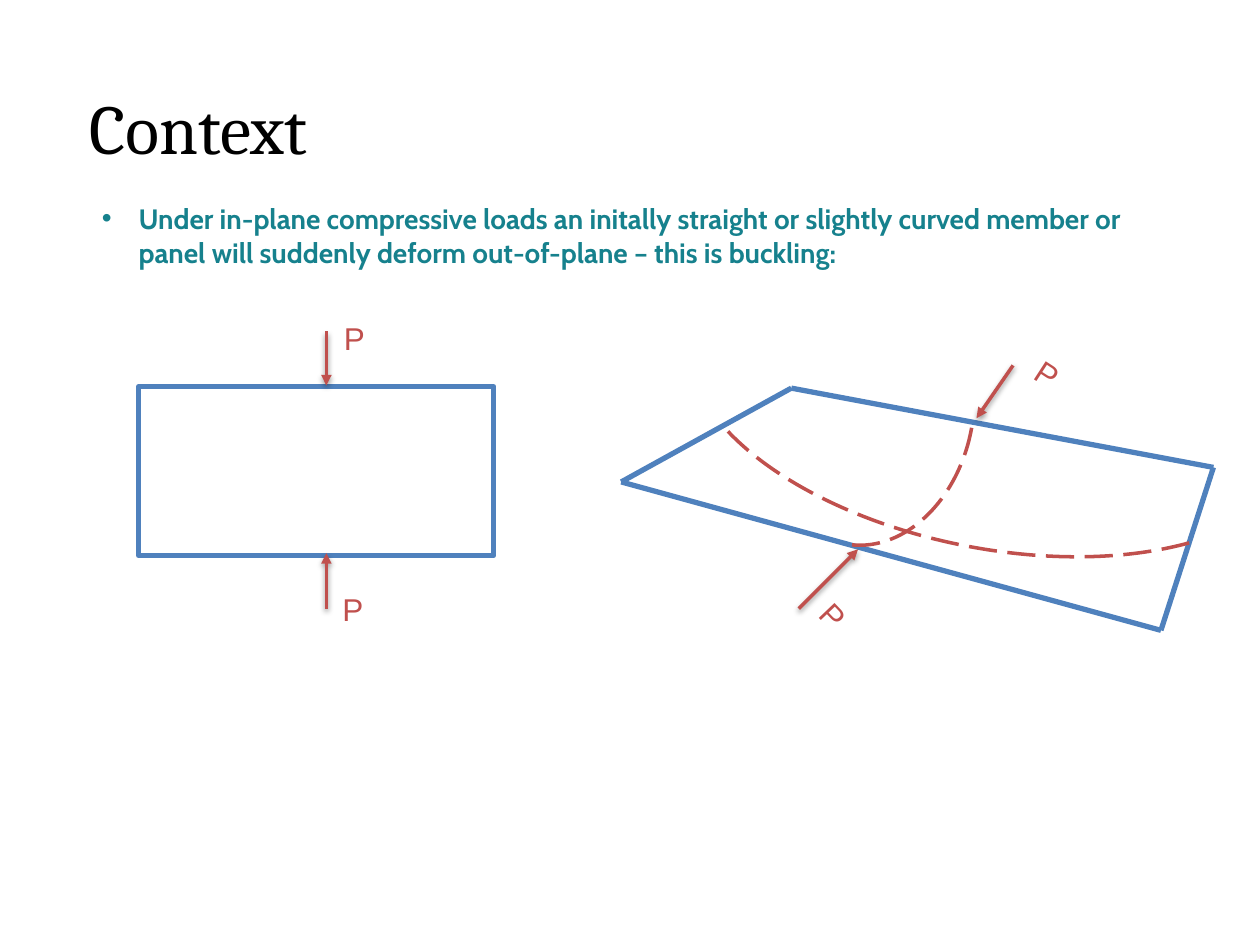
"""Build the buckling context slide with a flat plate and a buckled panel."""
from dataclasses import dataclass

from pptx import Presentation
from pptx.dml.color import RGBColor as Color
from pptx.enum.dml import MSO_LINE_DASH_STYLE as Dash
from pptx.enum.shapes import MSO_CONNECTOR as Connector, MSO_SHAPE as Shape
from pptx.enum.text import MSO_ANCHOR as Anchor, MSO_AUTO_SIZE as AutoSize, PP_ALIGN as Align
from pptx.oxml import parse_xml
from pptx.oxml.ns import nsdecls
from pptx.util import Pt


@dataclass(frozen=True)
class Theme:
    ink: str = "000000"
    teal: str = "16818D"
    edge: str = "4F81BD"
    load: str = "C0504D"
    paper: str = "FFFFFF"
    title_size: float = 40
    body_size: float = 16
    label_size: float = 18
    edge_width: float = 3
    load_width: float = 2


def add_xml(parent, tag, content="", attributes=""):
    parent.append(parse_xml(f"<a:{tag} {nsdecls('a')} {attributes}>{content}</a:{tag}>"))


def write(para, text, *, font, size, color, bold=False):
    span = para.add_run()
    span.text = text
    span.font.name = font
    span.font.size = Pt(size)
    span.font.bold = bold
    span.font.color.rgb = Color.from_string(color)


class SlideBuilder:
    def __init__(self, page, theme):
        self.page = page
        self.theme = theme

    def place(self, box, left, top, width, height):
        box.left, box.top, box.width, box.height = map(Pt, (left, top, width, height))

    def stroke(self, line, color, width):
        line.color.rgb = Color.from_string(color)
        line.width = Pt(width)

    def title(self, text, *bounds):
        box = self.page.shapes.title
        self.place(box, *bounds)
        frame = box.text_frame
        frame.auto_size = AutoSize.NONE
        frame.word_wrap = True
        frame.vertical_anchor = Anchor.TOP
        frame.margin_left = frame.margin_right = frame.margin_top = frame.margin_bottom = 0
        para = frame.paragraphs[0]
        para.alignment = Align.LEFT
        para.line_spacing = Pt(42)
        write(para, text, font="Cambria", size=self.theme.title_size, color=self.theme.ink)

    def bullet(self, text, *bounds):
        box = self.page.placeholders[1]
        self.place(box, *bounds)
        box.fill.solid()
        box.fill.fore_color.rgb = Color.from_string(self.theme.paper)
        add_xml(box.fill._xPr.find(".//{*}srgbClr"), "alpha", attributes='val="90000"')
        box.text_frame.auto_size = AutoSize.NONE
        para = box.text_frame.paragraphs[0]
        props = para._p.get_or_add_pPr()
        props.set("marL", str(Pt(21)))
        props.set("indent", str(Pt(-21)))
        add_xml(props, "buClr", f'<a:srgbClr val="{self.theme.teal}"/>')
        add_xml(props, "buFont", attributes='typeface="Arial"')
        add_xml(props, "buChar", attributes='char="•"')
        para.space_before = Pt(0)
        para.space_after = Pt(6)
        write(para, text, font="Cabin", size=self.theme.body_size,
              color=self.theme.teal, bold=True)

    def plate(self, *bounds):
        plate = self.page.shapes.add_shape(Shape.RECTANGLE, *map(Pt, bounds))
        plate.shadow.inherit = False
        plate.fill.background()
        self.stroke(plate.line, self.theme.edge, self.theme.edge_width)

    def edge(self, group, start, end):
        edge = group.shapes.add_connector(Connector.STRAIGHT, *map(Pt, start + end))
        self.stroke(edge.line, self.theme.edge, self.theme.edge_width)
        add_xml(edge._element.spPr, "effectLst")

    def curve(self, group, bounds, rotation, angles=()):
        arc = group.shapes.add_shape(Shape.ARC, *map(Pt, bounds))
        arc.shadow.inherit = False
        arc.fill.background()
        arc.rotation = rotation
        for index, angle in enumerate(angles):
            arc.adjustments[index] = angle
        self.stroke(arc.line, self.theme.load, self.theme.load_width)
        arc.line.dash_style = Dash.LONG_DASH

    def arrow(self, start, end):
        arrow = self.page.shapes.add_connector(Connector.STRAIGHT, *map(Pt, start + end))
        self.stroke(arrow.line, self.theme.load, self.theme.load_width)
        add_xml(arrow.line._get_or_add_ln(), "tailEnd", attributes='type="triangle"')
        shadow = (f'<a:outerShdw blurRad="{Pt(3.1)}" dist="{Pt(1.6)}" dir="5400000" '
                  'rotWithShape="0"><a:srgbClr val="000000"><a:alpha val="38000"/>'
                  '</a:srgbClr></a:outerShdw>')
        add_xml(arrow._element.spPr, "effectLst", shadow)

    def label(self, text, left, top, rotation=0):
        box = self.page.shapes.add_textbox(Pt(left), Pt(top), Pt(26.6), Pt(29))
        box.rotation = rotation
        box.text_frame.word_wrap = False
        box.text_frame.auto_size = AutoSize.SHAPE_TO_FIT_TEXT
        write(box.text_frame.paragraphs[0], text, font="Arial",
              size=self.theme.label_size, color=self.theme.load)


def main():
    deck = Presentation()
    deck.slide_width, deck.slide_height = Pt(720), Pt(540)
    page = deck.slides.add_slide(deck.slide_layouts[1])
    builder = SlideBuilder(page, Theme())

    builder.title("Context", 51, 54, 513, 51)
    builder.bullet("Under in-plane compressive loads an initally straight or slightly curved "
                   "member or panel will suddenly deform out-of-plane – this is buckling:",
                   51, 111.6, 632, 62.6)
    builder.plate(79.2, 221, 203, 96.5)

    panel = page.shapes.add_group_shape()
    back, left, front, right = (452.2, 221.8), (355, 275.4), (663.4, 360.2), (693.4, 267.1)
    for start, end in ((back, left), (back, right), (left, front), (right, front)):
        builder.edge(panel, start, end)
    builder.curve(panel, (419, 175, 156.2, 118.1), 100.2)
    builder.curve(panel, (477.4, 42.5, 183.6, 358.6), 101, (178.63, 42.4))

    loads = (
        ((186.5, 189.4), (186.5, 220.3), (189.4, 178.6, 0)),
        ((186.5, 347.8), (186.5, 316.1), (188.6, 333.4, 0)),
        ((578.9, 208.8), (558, 239), (585.4, 199.4, 33)),
        ((456.5, 347.8), (490.3, 313.9), (463, 337.7, 46.4)),
    )
    for start, end, spot in loads:
        builder.arrow(start, end)
        builder.label("P", *spot)

    deck.save("out.pptx")


if __name__ == "__main__":
    main()
